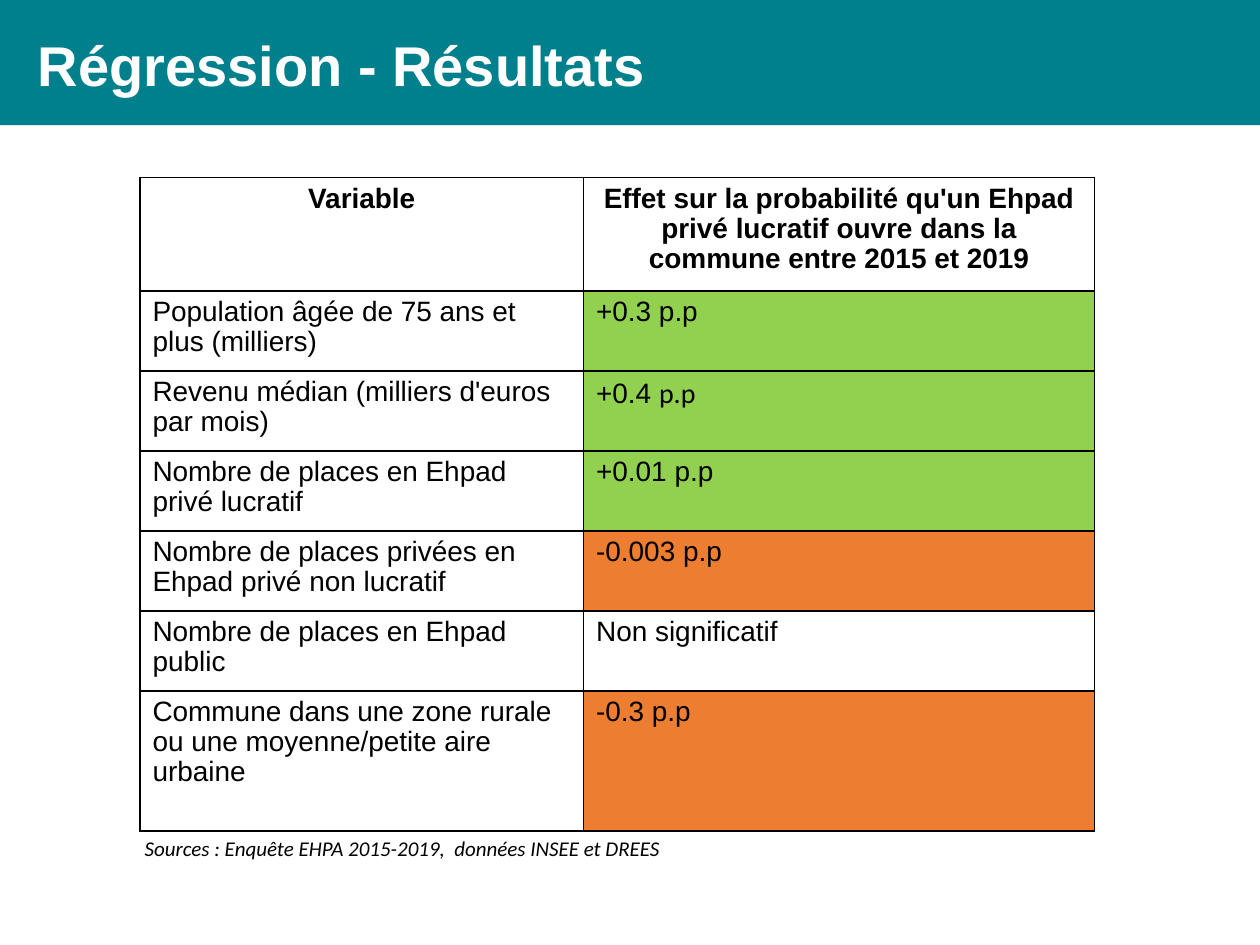
from typing import NamedTuple

from lxml import etree
from pptx import Presentation
from pptx.dml.color import RGBColor
from pptx.enum import shapes, text
from pptx.oxml import ns
from pptx.util import Pt

COLORS = {
    "banner": "00808C",
    "white": "FFFFFF",
    "black": "000000",
    "positive": "92D050",
    "negative": "ED7D31",
}
COLUMN_WIDTHS = (253.5, 292)
ROW_HEIGHTS = (64.8, *[45.7] * 5, 80.2)
TABLE_LEFT, TABLE_TOP = 80, 101.5


class Result(NamedTuple):
    variable: str
    effect: str
    fill: str = "white"
    unit: str = ""  # trailing text set in Calibri


HEADER = Result(
    "Variable",
    "Effet sur la probabilité qu'un Ehpad privé lucratif ouvre dans la commune entre 2015 et 2019",
)
RESULTS = [
    Result("Population âgée de 75 ans et plus (milliers)", "+0.3 p.p", "positive"),
    Result("Revenu médian (milliers d'euros par mois)", "+0.4 ", "positive", "p.p"),
    Result("Nombre de places en Ehpad privé lucratif", "+0.01 p.p", "positive"),
    Result("Nombre de places privées en Ehpad privé non lucratif", "-0.003 p.p", "negative"),
    Result("Nombre de places en Ehpad public", "Non significatif"),
    Result("Commune dans une zone rurale ou une moyenne/petite aire urbaine", "-0.3 p.p", "negative"),
]


def color(name: str) -> RGBColor:
    return RGBColor.from_string(COLORS[name])


def style_font(font, size: float, name: str = "Arial", ink: str = "black",
               bold: bool = False, italic: bool = False) -> None:
    font.size, font.name = Pt(size), name
    font.bold, font.italic = bold, italic
    font.color.rgb = color(ink)


def add_borders(cell) -> None:
    properties = cell._tc.get_or_add_tcPr()
    for position, side in enumerate(("lnL", "lnR", "lnT", "lnB")):
        line = etree.Element(ns.qn(f"a:{side}"), w=str(Pt(1)))
        fill = etree.SubElement(line, ns.qn("a:solidFill"))
        etree.SubElement(fill, ns.qn("a:srgbClr"), val=COLORS["black"])
        properties.insert(position, line)


def fill_cell(cell, words: str, fill: str = "white", unit: str = "", header: bool = False) -> None:
    cell.fill.solid()
    cell.fill.fore_color.rgb = color(fill)
    add_borders(cell)
    para = cell.text_frame.paragraphs[0]
    para.alignment = text.PP_ALIGN.CENTER if header else text.PP_ALIGN.LEFT
    para.line_spacing = 0.97
    parts = [(words, "Arial")] + ([(unit, "Calibri")] if unit else [])
    for content, font_name in parts:
        span = para.add_run()
        span.text = content
        style_font(span.font, 16, font_name, bold=header)


def add_results_table(page) -> None:
    rows = [HEADER, *RESULTS]
    frame = page.shapes.add_table(
        len(rows), len(COLUMN_WIDTHS), Pt(TABLE_LEFT), Pt(TABLE_TOP),
        Pt(sum(COLUMN_WIDTHS)), Pt(sum(ROW_HEIGHTS)))
    table = frame.table
    table.horz_banding = False
    for column, width in zip(table.columns, COLUMN_WIDTHS):
        column.width = Pt(width)
    for index, (result, height) in enumerate(zip(rows, ROW_HEIGHTS)):
        table.rows[index].height = Pt(height)
        header = result is HEADER
        fill_cell(table.cell(index, 0), result.variable, header=header)
        fill_cell(table.cell(index, 1), result.effect, result.fill, result.unit, header)


def add_banner_title(page, words: str) -> None:
    banner = page.shapes.add_shape(
        shapes.MSO_SHAPE.RECTANGLE, 0, 0, Pt(720), Pt(71.5))
    banner.shadow.inherit = False
    banner.fill.solid()
    banner.fill.fore_color.rgb = color("banner")
    banner.line.fill.background()

    # The banner goes behind the title
    title = page.shapes.title
    title._element.addprevious(banner._element)
    title.left, title.top, title.width, title.height = Pt(14.4), Pt(13.7), Pt(692), Pt(46)
    frame = title.text_frame
    frame.vertical_anchor = text.MSO_ANCHOR.TOP
    frame.auto_size = text.MSO_AUTO_SIZE.NONE
    para = frame.paragraphs[0]
    para.text = words
    para.alignment = text.PP_ALIGN.LEFT
    style_font(para.font, 32, ink="white", bold=True)


def add_source_note(page, words: str) -> None:
    box = page.shapes.add_textbox(Pt(75.6), Pt(473.8), Pt(520.5), Pt(21.8))
    box.text_frame.word_wrap = True
    para = box.text_frame.paragraphs[0]
    para.text = words
    style_font(para.font, 12, "Calibri", italic=True)


def main() -> None:
    deck = Presentation()
    deck.slide_width, deck.slide_height = Pt(720), Pt(540)
    page = deck.slides.add_slide(deck.slide_layouts.get_by_name("Title Only"))

    add_banner_title(page, "Régression - Résultats")
    add_results_table(page)
    add_source_note(page, "Sources : Enquête EHPA 2015-2019,  données INSEE et DREES")

    deck.save("out.pptx")


if __name__ == "__main__":
    main()
